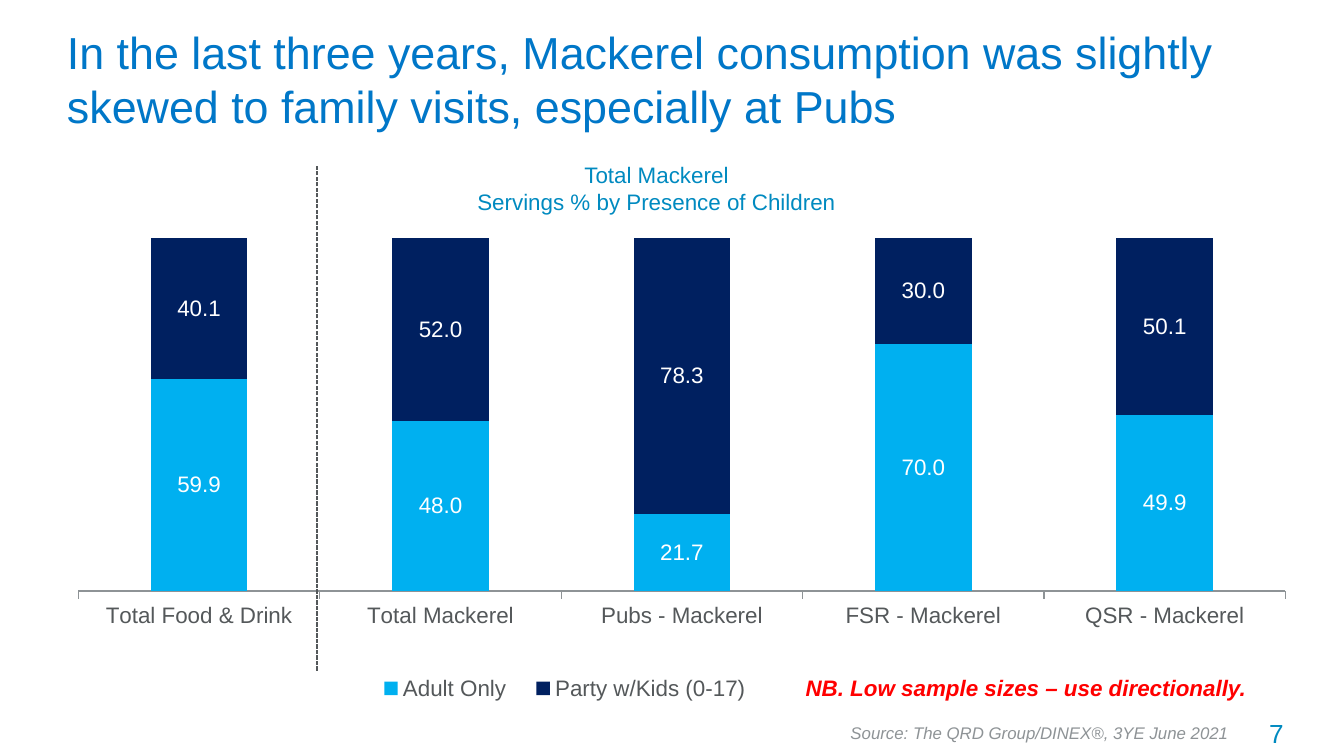
import pptx
import pptx.chart.data
import pptx.dml.color
import pptx.enum.chart
import pptx.enum.dml
import pptx.enum.shapes
import pptx.enum.text
import pptx.oxml
import pptx.oxml.ns
import pptx.util

SLIDE_WIDTH = pptx.util.Inches(10)
SLIDE_HEIGHT = SLIDE_WIDTH * 9 // 16
FONT = "Arial"

TITLE_BLUE = pptx.dml.color.RGBColor(0x00, 0x77, 0xC8)
TEAL = pptx.dml.color.RGBColor(0x00, 0x8A, 0xC0)
SKY = pptx.dml.color.RGBColor(0x00, 0xB0, 0xF0)
NAVY = pptx.dml.color.RGBColor(0x00, 0x20, 0x60)
SLATE = pptx.dml.color.RGBColor(0x54, 0x58, 0x5A)
GREY = pptx.dml.color.RGBColor(0x8E, 0x93, 0x96)
RED = pptx.dml.color.RGBColor(0xFF, 0x00, 0x00)
WHITE = pptx.dml.color.RGBColor(0xFF, 0xFF, 0xFF)

LEFT = pptx.enum.text.PP_ALIGN.LEFT
CENTER = pptx.enum.text.PP_ALIGN.CENTER
RIGHT = pptx.enum.text.PP_ALIGN.RIGHT

VISITS = ["Total Food & Drink", "Total Mackerel", "Pubs - Mackerel",
          "FSR - Mackerel", "QSR - Mackerel"]
PARTIES = [
    ("Adult Only", [59.9, 48.0, 21.7, 70.0, 49.9], SKY),
    ("Party w/Kids (0-17)", [40.1, 52.0, 78.3, 30.0, 50.1], NAVY),
]


def across(percent):
    return round(SLIDE_WIDTH * percent / 100)


def down(percent):
    return round(SLIDE_HEIGHT * percent / 100)


def place(left, top, width, height):
    return across(left), down(top), across(width), down(height)


def style_font(font, size, color, bold=False, italic=False):
    font.name = FONT
    font.size = pptx.util.Pt(size)
    font.color.rgb = color
    font.bold = bold
    font.italic = italic


def add_text(slide, area, lines, size, color, align=LEFT, wrap=True,
             bold=False, italic=False, middle=False):
    frame = slide.shapes.add_textbox(*place(*area)).text_frame
    frame.word_wrap = wrap
    if middle:
        frame.vertical_anchor = pptx.enum.text.MSO_ANCHOR.MIDDLE
    for index, line in enumerate(lines):
        paragraph = frame.add_paragraph() if index else frame.paragraphs[0]
        paragraph.alignment = align
        run = paragraph.add_run()
        run.text = line
        style_font(run.font, size, color, bold, italic)


def add_divider(slide, x, top, bottom):
    divider = slide.shapes.add_connector(
        pptx.enum.shapes.MSO_CONNECTOR.STRAIGHT,
        across(x), down(bottom), across(x), down(top))
    divider.line.color.rgb = SLATE
    divider.line.width = pptx.util.Pt(0.75)
    divider.line.dash_style = pptx.enum.dml.MSO_LINE.SQUARE_DOT
    properties = divider.element.spPr
    properties.append(pptx.oxml.parse_xml(
        f"<a:effectLst {pptx.oxml.ns.nsdecls('a')}/>"))


def chart_layout(x, y, w, h, target=""):
    shares = "".join(f'<c:{key} val="{value}"/>'
                     for key, value in zip("xywh", (x, y, w, h)))
    return pptx.oxml.parse_xml(
        f"<c:layout {pptx.oxml.ns.nsdecls('c')}><c:manualLayout>{target}"
        '<c:xMode val="edge"/><c:yMode val="edge"/>'
        f"{shares}</c:manualLayout></c:layout>")


def arrange_chart(chart):
    plot_area = chart.element.xpath("c:chart/c:plotArea")[0]
    for layout in plot_area.xpath("c:layout"):
        plot_area.remove(layout)
    plot_area.insert(0, chart_layout(0.02, 0.11, 0.98, 0.67,
                                     '<c:layoutTarget val="inner"/>'))
    legend = chart.element.xpath("c:chart/c:legend")[0]
    for layout in legend.xpath("c:layout"):
        legend.remove(layout)
    position = legend.xpath("c:legendPos")[0]
    position.addnext(chart_layout(0.25, 0.93, 0.33, 0.07))


def add_servings_chart(slide, area):
    servings = pptx.chart.data.CategoryChartData(number_format="#,##0.0")
    servings.categories = VISITS
    for name, values, _ in PARTIES:
        servings.add_series(name, values)
    chart = slide.shapes.add_chart(
        pptx.enum.chart.XL_CHART_TYPE.COLUMN_STACKED_100,
        *place(*area), servings).chart
    style_font(chart.font, 12, SLATE)
    chart.has_title = False
    chart.has_legend = True
    chart.legend.position = pptx.enum.chart.XL_LEGEND_POSITION.BOTTOM
    chart.legend.include_in_layout = False
    chart.value_axis.visible = False
    chart.value_axis.has_major_gridlines = False
    visits_axis = chart.category_axis
    visits_axis.major_tick_mark = pptx.enum.chart.XL_TICK_MARK.OUTSIDE
    visits_axis.format.line.color.rgb = GREY
    columns = chart.plots[0]
    columns.gap_width = 150
    columns.overlap = 100
    columns.vary_by_categories = False
    for party, (_, _, color) in zip(columns.series, PARTIES):
        party.format.fill.solid()
        party.format.fill.fore_color.rgb = color
        labels = party.data_labels
        labels.show_value = True
        labels.number_format = "#,##0.0"
        labels.number_format_is_linked = False
        style_font(labels.font, 12, WHITE)
    arrange_chart(chart)


def main():
    deck = pptx.Presentation()
    deck.slide_width = SLIDE_WIDTH
    deck.slide_height = SLIDE_HEIGHT
    slide = deck.slides.add_slide(deck.slide_layouts[6])

    add_servings_chart(slide, (4, 23.82, 91.7, 69.69))
    add_text(slide, (34.4, 20.44, 28.9, 8.89),
             ["Total Mackerel", "Servings % by Presence of Children"],
             12, TEAL, CENTER, wrap=False)
    add_divider(slide, 23.6, 21.87, 88.71)
    add_text(slide, (88.5, 94.04, 8, 6.04), ["7"], 14, TEAL, RIGHT)
    add_text(slide, (4, 4.09, 91.7, 12.62),
             ["In the last three years, Mackerel consumption was slightly "
              "skewed to family visits, especially at Pubs"],
             24, TITLE_BLUE, middle=True)
    add_text(slide, (57, 88.36, 38.7, 5.33),
             ["NB. Low sample sizes – use directionally."],
             12, RED, CENTER, bold=True, italic=True)
    add_text(slide, (62.3, 94.76, 31.6, 4.44),
             ["Source: The QRD Group/DINEX®, 3YE June 2021"],
             9, GREY, wrap=False, italic=True)

    deck.save("out.pptx")


if __name__ == "__main__":
    main()
